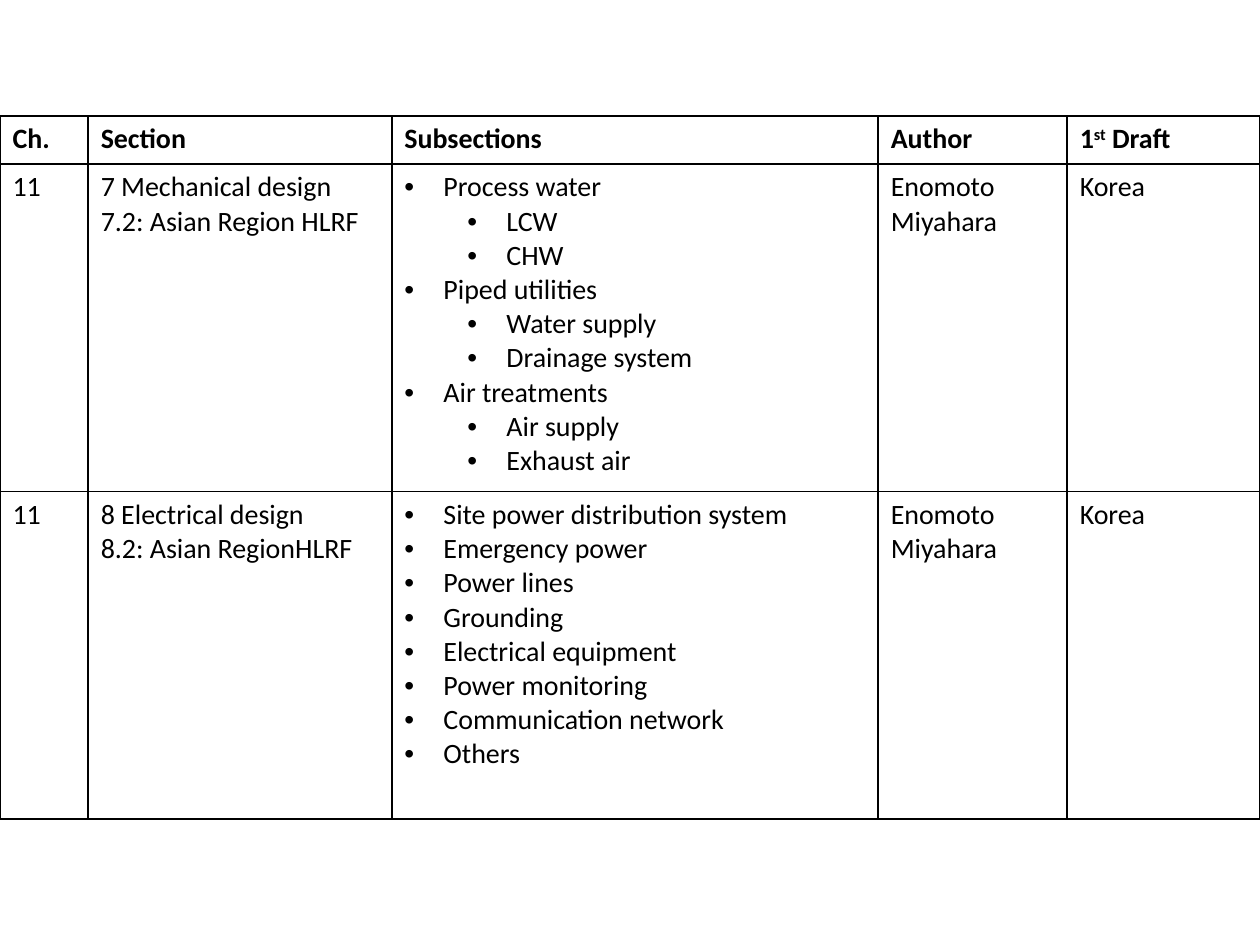
from dataclasses import dataclass

from lxml.etree import SubElement
from pptx import Presentation
from pptx.dml.color import RGBColor
from pptx.oxml.ns import qn
from pptx.util import Inches, Pt


@dataclass(frozen=True)
class Theme:
    font: str = "Calibri"
    bullet_font: str = "Arial"
    size: int = 16
    ink: str = "000000"
    paper: str = "FFFFFF"
    border: int = 1


theme = Theme()


def add_borders(cell):
    properties = cell._tc.get_or_add_tcPr()
    for side in ("lnL", "lnR", "lnT", "lnB"):
        line = SubElement(properties, qn(f"a:{side}"), w=str(Pt(theme.border)))
        fill = SubElement(line, qn("a:solidFill"))
        SubElement(fill, qn("a:srgbClr"), val=theme.ink)


def add_bullet(para, level):
    para.level = level
    properties = para._p.get_or_add_pPr()
    properties.set("marL", str(Inches(0.31 + 0.5 * level)))
    properties.set("indent", str(Inches(-0.31)))
    SubElement(properties, qn("a:buFont"), typeface=theme.bullet_font)
    SubElement(properties, qn("a:buChar"), char="•")


column_widths = [0.7, 2.41, 3.86, 1.5, 1.53]
row_heights = [0.38, 2.6, 2.6]
subsection_column = 2
authors = ["Enomoto", "Miyahara"]

mechanical = [
    (0, "Process water"), (1, "LCW"), (1, "CHW"),
    (0, "Piped utilities"), (1, "Water supply"), (1, "Drainage system"),
    (0, "Air treatments"), (1, "Air supply"), (1, "Exhaust air"),
]
electrical = [(0, name) for name in (
    "Site power distribution system", "Emergency power", "Power lines", "Grounding",
    "Electrical equipment", "Power monitoring", "Communication network", "Others",
)]
rows = [
    [["Ch."], ["Section"], [(None, "Subsections")], ["Author"], ["1^st^ Draft"]],
    [["11"], ["7 Mechanical design", "7.2: Asian Region HLRF"], mechanical, authors, ["Korea"]],
    [["11"], ["8 Electrical design", "8.2: Asian RegionHLRF"], electrical, authors, ["Korea"]],
]

deck = Presentation()
deck.slide_width, deck.slide_height = Inches(10), Inches(7.5)
page = deck.slides.add_slide(deck.slide_layouts[6])

table = page.shapes.add_table(
    len(row_heights), len(column_widths), Inches(0), Inches(0.92),
    Inches(sum(column_widths)), Inches(sum(row_heights)),
).table
table.first_row = False
table.horz_banding = False
for column, width in zip(table.columns, column_widths):
    column.width = Inches(width)
for row, height in zip(table.rows, row_heights):
    row.height = Inches(height)

for row_index, row in enumerate(rows):
    for column_index, entries in enumerate(row):
        cell = table.cell(row_index, column_index)
        add_borders(cell)
        cell.fill.solid()
        cell.fill.fore_color.rgb = RGBColor.from_string(theme.paper)
        for index, entry in enumerate(entries):
            level, text = entry if column_index == subsection_column else (None, entry)
            box = cell.text_frame
            para = box.add_paragraph() if index else box.paragraphs[0]
            if level is not None:
                add_bullet(para, level)
            for part_index, part in enumerate(text.split("^")):
                span = para.add_run()
                span.text = part
                span.font.name = theme.font
                span.font.size = Pt(theme.size)
                span.font.bold = row_index == 0
                span.font.color.rgb = RGBColor.from_string(theme.ink)
                if part_index % 2:
                    span.font._element.set("baseline", "30000")

deck.save("out.pptx")
